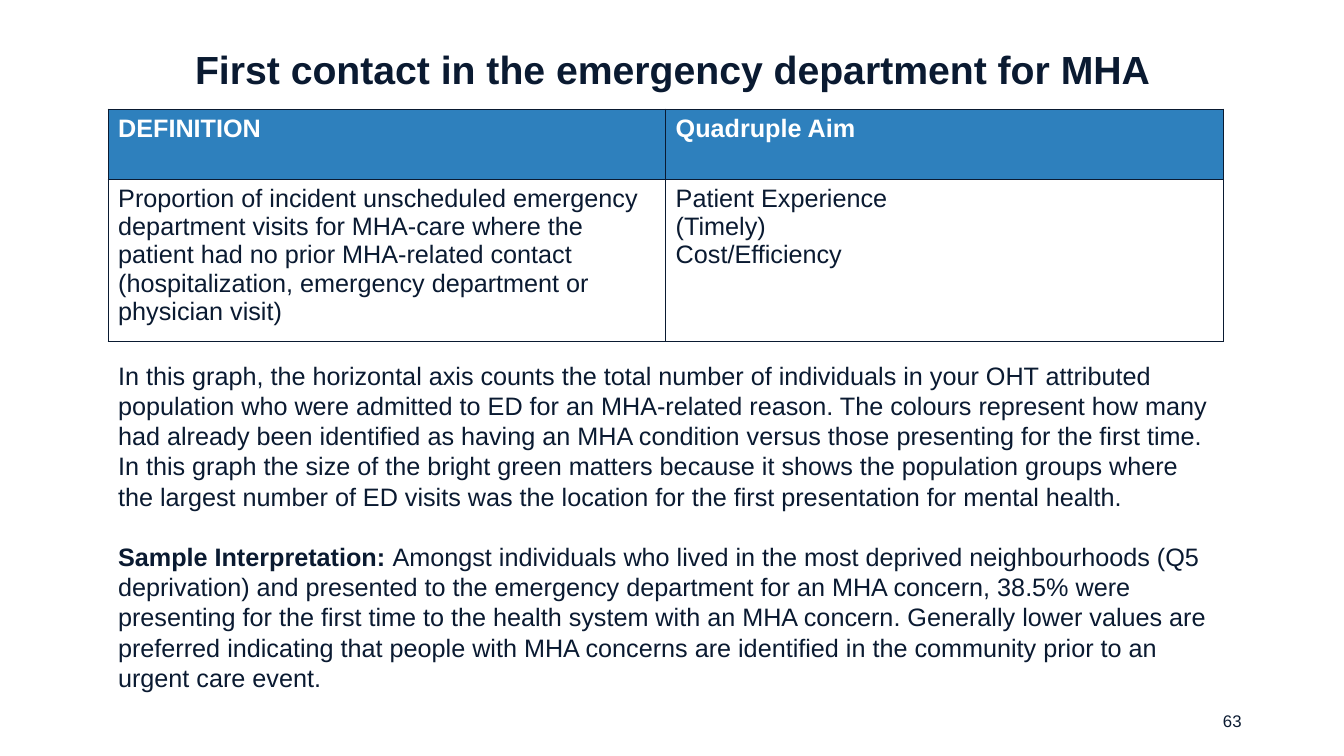
from lxml.etree import SubElement
from pptx import Presentation
from pptx.dml.color import RGBColor
from pptx.enum.text import MSO_ANCHOR, PP_ALIGN
from pptx.oxml.ns import qn
from pptx.util import Pt

SCALE = 9525
INK, BLUE, WHITE = "0A1A31", "2E80BD", "FFFFFF"
TITLE = "First contact in the emergency department for MHA"
CELLS = [
    ["DEFINITION", "Quadruple Aim"],
    ["Proportion of incident unscheduled emergency department visits for MHA-care where the "
     "patient had no prior MHA-related contact (hospitalization, emergency department or "
     "physician visit)",
     "Patient Experience\n(Timely)\nCost/Efficiency"],
]
GRAPH = (
    "In this graph, the horizontal axis counts the total number of individuals in your OHT attributed "
    "population who were admitted to ED for an MHA-related reason. The colours represent how many "
    "had already been identified as having an MHA condition versus those presenting for the first "
    "time. In this graph the size of the bright green matters because it shows the population groups "
    "where the largest number of ED visits was the location for the first presentation for mental health."
)
LEAD = "Sample Interpretation: "
SAMPLE = (
    "Amongst individuals who lived in the most deprived neighbourhoods (Q5 deprivation) and "
    "presented to the emergency department for an MHA concern, 38.5% were presenting for the "
    "first time to the health system with an MHA concern. Generally lower values are preferred "
    "indicating that people with MHA concerns are identified in the community prior to an "
    "urgent care event."
)


def px(num):
    return num * SCALE


def color(code):
    return RGBColor.from_string(code)


def style(font, size, code=INK, bold=False):
    font.name = "Arial"
    font.size = Pt(size)
    font.bold = bold
    font.color.rgb = color(code)


def add_text(slide, box, text, size, bold=False, align=PP_ALIGN.LEFT, anchor=MSO_ANCHOR.TOP):
    frame = slide.shapes.add_textbox(*map(px, box)).text_frame
    frame.word_wrap = True
    frame.vertical_anchor = anchor
    frame.text = text
    for para in frame.paragraphs:
        para.alignment = align
        for run in para.runs:
            style(run.font, size, bold=bold)
    return frame


def add_edges(cell):
    props = cell._tc.get_or_add_tcPr()
    for place, side in enumerate(("lnL", "lnR", "lnT", "lnB")):
        line = SubElement(props, qn(f"a:{side}"), w=str(Pt(1)))
        fill = SubElement(line, qn("a:solidFill"))
        SubElement(fill, qn("a:srgbClr"), val=INK)
        props.insert(place, line)


def add_grid(slide, box, rows, highs):
    grid = slide.shapes.add_table(len(rows), len(rows[0]), *map(px, box)).table
    for row, (texts, high) in enumerate(zip(rows, highs)):
        grid.rows[row].height = px(high)
        head = row == 0
        for col, text in enumerate(texts):
            cell = grid.cell(row, col)
            cell.text_frame.text = text
            cell.fill.solid()
            cell.fill.fore_color.rgb = color(BLUE if head else WHITE)
            add_edges(cell)
            for para in cell.text_frame.paragraphs:
                for run in para.runs:
                    style(run.font, 18, WHITE if head else INK, head)


def add_body(slide, box):
    frame = add_text(slide, box, GRAPH, 18)
    para = frame.add_paragraph()
    para.space_before = Pt(21.6)
    for text, bold in ((LEAD, True), (SAMPLE, False)):
        run = para.add_run()
        run.text = text
        style(run.font, 18, bold=bold)


def main():
    deck = Presentation()
    deck.slide_width, deck.slide_height = px(1280), px(720)
    slide = deck.slides.add_slide(deck.slide_layouts[6])
    add_text(slide, (904, 667, 288, 38), "63", 12,
             align=PP_ALIGN.RIGHT, anchor=MSO_ANCHOR.MIDDLE)
    title = add_text(slide, (74, 28, 1133, 81), TITLE, 28, True,
                     PP_ALIGN.CENTER, MSO_ANCHOR.MIDDLE)
    title.paragraphs[0].line_spacing = 0.9
    add_grid(slide, (103, 104, 1062, 221), CELLS, (67, 154))
    add_body(slide, (103, 338, 1062, 329))
    deck.save("out.pptx")


if __name__ == "__main__":
    main()
